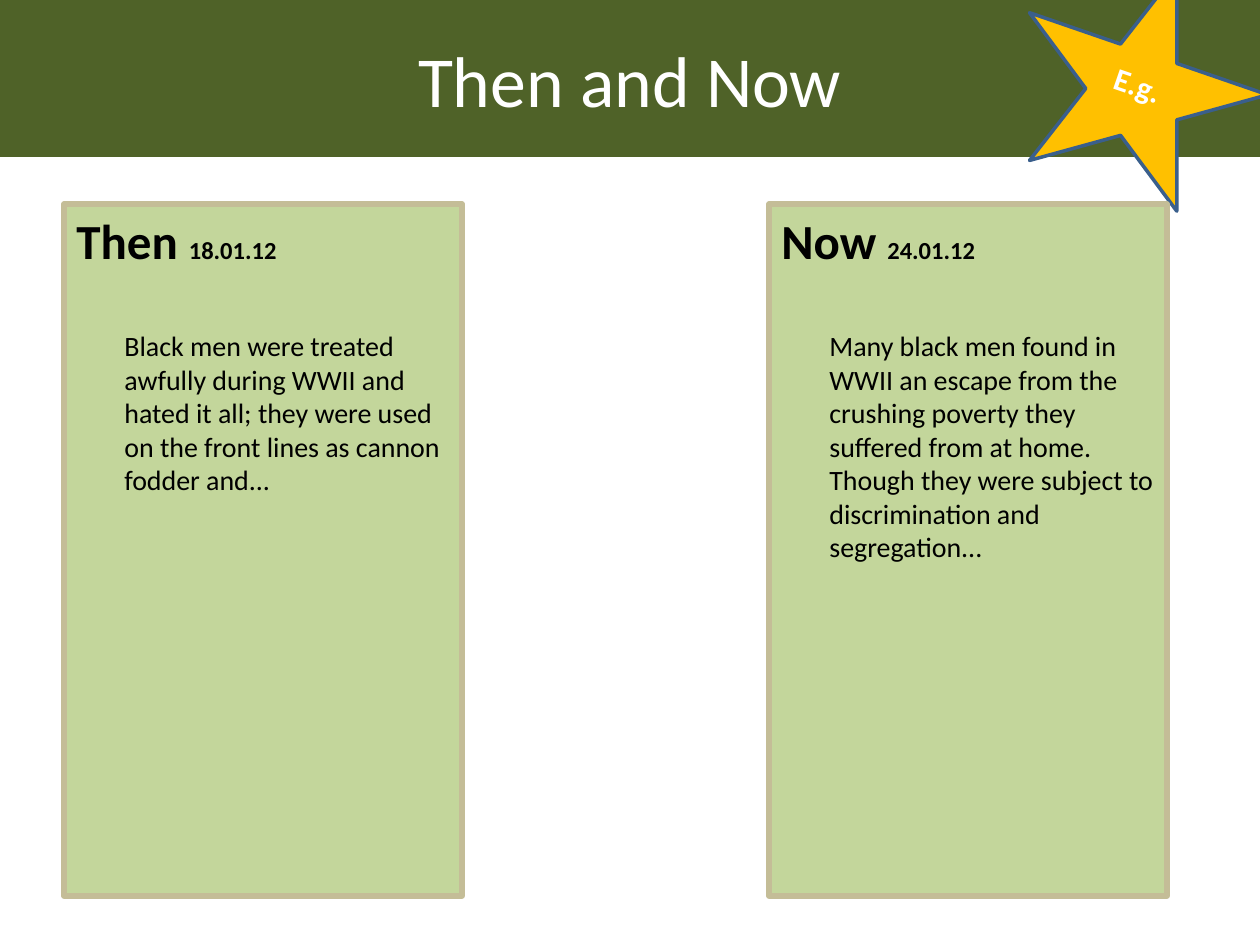
"""Build the Then and Now slide with two dated cards and a star."""
from dataclasses import dataclass

from pptx import Presentation
from pptx.dml.color import RGBColor
from pptx.enum.shapes import MSO_SHAPE
from pptx.enum.text import MSO_ANCHOR, PP_ALIGN
from pptx.util import Pt

RECT, STAR = MSO_SHAPE.RECTANGLE, MSO_SHAPE.STAR_5_POINT
TOP, MIDDLE = MSO_ANCHOR.TOP, MSO_ANCHOR.MIDDLE
LEFT, CENTER, RIGHT = PP_ALIGN.LEFT, PP_ALIGN.CENTER, PP_ALIGN.RIGHT
SCALE = 914400 / 126
FONT = "Calibri"
TILT = 19
HUES = {
    "band": "4F6228", "card": "C3D69B", "edge": "C4BD97", "star": "FFC000",
    "rim": "3A5F8C", "white": "FFFFFF", "black": "000000",
}


@dataclass
class Box:
    left: int
    top: int
    width: int
    height: int


@dataclass
class Card:
    left: int
    title: str
    date: str
    body: str


CARDS = [
    Card(64, "Then ", "18.01.12",
         "Black men were treated awfully during WWII and hated it all; "
         "they were used on the front lines as cannon fodder and..."),
    Card(769, "Now ", "24.01.12",
         "Many black men found in WWII an escape from the crushing poverty "
         "they suffered from at home. Though they were subject to "
         "discrimination and segregation..."),
]


def emu(px: int) -> int:
    return round(px * SCALE)


def tint(name: str) -> RGBColor:
    return RGBColor.from_string(HUES[name])


def add_box(slide, kind, box: Box, fill: str, edge: str = "", weight: int = 0,
            turn: int = 0):
    shape = slide.shapes.add_shape(
        kind, emu(box.left), emu(box.top), emu(box.width), emu(box.height))
    shape.shadow.inherit = False
    shape.rotation = turn
    shape.fill.solid()
    shape.fill.fore_color.rgb = tint(fill)
    if edge:
        shape.line.color.rgb = tint(edge)
        shape.line.width = Pt(weight)
    else:
        shape.line.fill.background()
    return shape


def set_font(font, size: int, hue: str, bold: bool = False) -> None:
    font.name, font.size, font.bold = FONT, Pt(size), bold
    font.color.rgb = tint(hue)


def add_label(shape, text: str, size: int, align, anchor, bold: bool,
              wrap: bool) -> None:
    frame = shape.text_frame
    frame.word_wrap, frame.vertical_anchor = wrap, anchor
    para = frame.paragraphs[0]
    para.text, para.alignment = text, align
    set_font(para.font, size, "white", bold)


def add_card(slide, card: Card) -> None:
    box = Box(card.left, 204, 398, 692)
    frame = add_box(slide, RECT, box, "card", "edge", 3).text_frame
    frame.word_wrap, frame.vertical_anchor = True, TOP
    head = frame.paragraphs[0]
    head.alignment = LEFT
    for text, size in ((card.title, 28), (card.date, 14)):
        run = head.add_run()
        run.text = text
        set_font(run.font, size, "black", True)
    body = frame.add_paragraph()
    body.text, body.alignment = card.body, LEFT
    body.space_before = Pt(34)
    body._p.get_or_add_pPr().set("marL", str(emu(48)))
    set_font(body.font, 16, "black")


def main() -> None:
    deck = Presentation()
    deck.slide_width, deck.slide_height = emu(1260), emu(945)
    slide = deck.slides.add_slide(deck.slide_layouts[6])
    then, now = CARDS
    band = add_box(slide, RECT, Box(0, 0, 1260, 157), "band")
    add_label(band, "Then and Now", 41, CENTER, MIDDLE, False, True)
    add_card(slide, then)
    add_box(slide, STAR, Box(1014, -34, 252, 226), "star", "rim", 2, TILT)
    tag = add_box(slide, RECT, Box(1101, 59, 73, 52), "star", turn=TILT)
    add_label(tag, "E.g.", 18, RIGHT, TOP, True, False)
    add_card(slide, now)
    deck.save("out.pptx")


if __name__ == "__main__":
    main()
